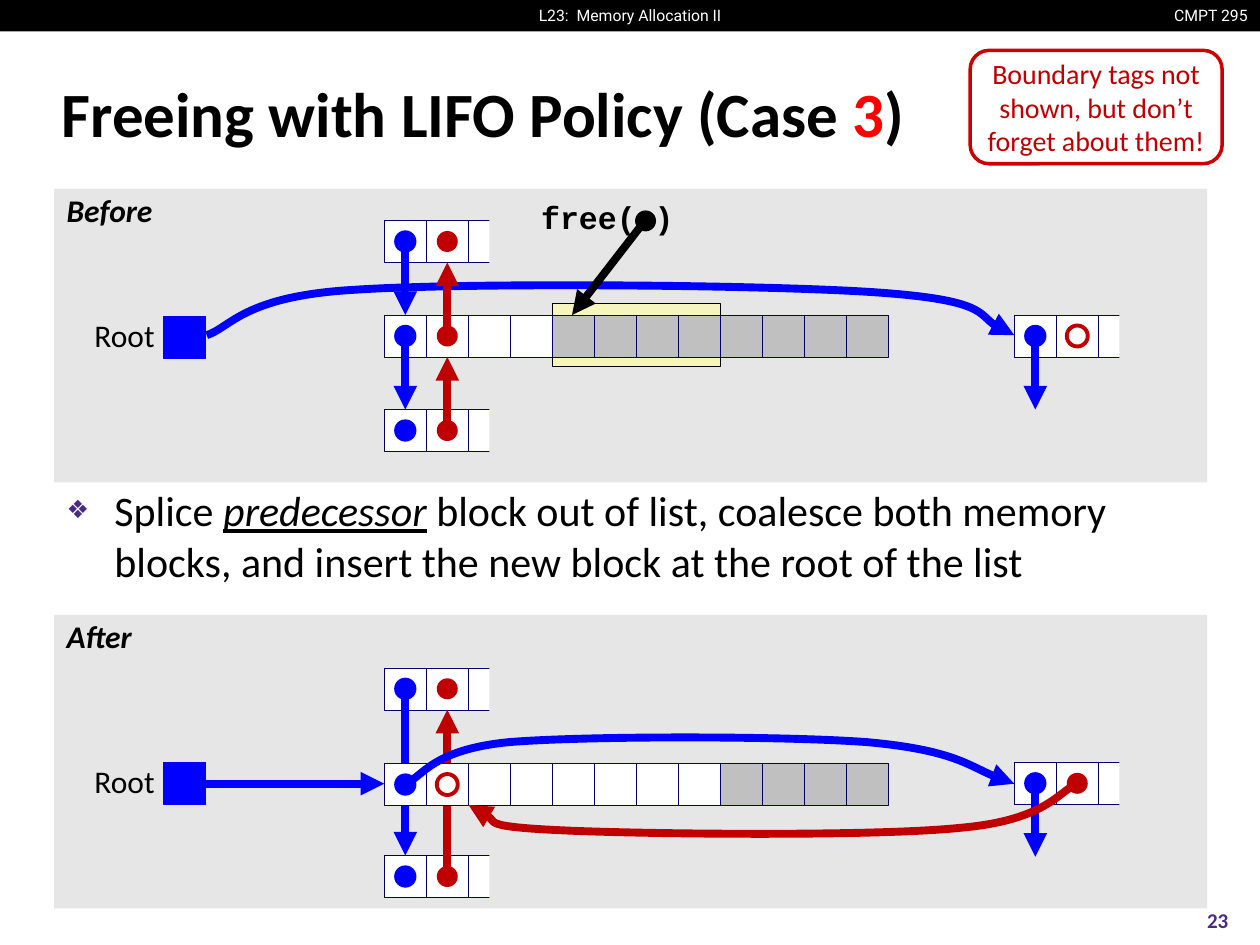
from lxml import etree
from pptx import Presentation
from pptx.dml.color import RGBColor
from pptx.enum.shapes import MSO_CONNECTOR, MSO_SHAPE
from pptx.enum.text import MSO_ANCHOR, PP_ALIGN
from pptx.oxml.ns import qn
from pptx.util import Inches, Pt

RECT, OVAL, ROUNDED = MSO_SHAPE.RECTANGLE, MSO_SHAPE.OVAL, MSO_SHAPE.ROUNDED_RECTANGLE
STRAIGHT = MSO_CONNECTOR.STRAIGHT
TOP, MIDDLE = MSO_ANCHOR.TOP, MSO_ANCHOR.MIDDLE
LEFT, CENTER, RIGHT = PP_ALIGN.LEFT, PP_ALIGN.CENTER, PP_ALIGN.RIGHT
COLORS = {
    "black": "000000", "white": "FFFFFF", "panel": "E6E6E6", "edge": "000066",
    "used": "C0C0C0", "freed": "F6F5BD", "next": "0000FF", "prev": "C00000",
    "border": "CC0000", "case": "FF0000", "accent": "4B2A85",
}
CELL = 1 / 3
DOT = 1 / 6
ROOT_X, LIST_X, FAR_X = 0.87, 2.62, 7.62


def rgb(name):
    return RGBColor.from_string(COLORS[name])


def add_shape(page, kind, left, top, width, height, fill=None, line=None, weight=0.75):
    shape = page.shapes.add_shape(kind, Inches(left), Inches(top), Inches(width), Inches(height))
    shape.shadow.inherit = False
    if fill:
        shape.fill.solid()
        shape.fill.fore_color.rgb = rgb(fill)
    else:
        shape.fill.background()
    if line:
        shape.line.color.rgb = rgb(line)
        shape.line.width = Pt(weight)
    else:
        shape.line.fill.background()
    return shape


def fill_text(box, runs, size, color="black", font="Calibri", align=LEFT, anchor=TOP,
              bold=None, italic=None, wrap=True, margins=(0.1, 0.05), spacing=None):
    frame = box.text_frame
    frame.word_wrap = wrap
    frame.vertical_anchor = anchor
    frame.margin_left = frame.margin_right = Inches(margins[0])
    frame.margin_top = frame.margin_bottom = Inches(margins[1])
    para = frame.paragraphs[0]
    para.alignment = align
    para.line_spacing = spacing
    para.font.size = Pt(size)
    para.font.name = font
    para.font.bold = bold
    para.font.italic = italic
    para.font.color.rgb = rgb(color)
    for text in runs:
        para.add_run().text = text
    return para


def add_text(page, left, top, width, height, runs, size, **style):
    box = page.shapes.add_textbox(Inches(left), Inches(top), Inches(width), Inches(height))
    return fill_text(box, runs, size, **style)


def set_arrow_line(line, color):
    line.color.rgb = rgb(color)
    line.width = Pt(4.5)
    etree.SubElement(line._get_or_add_ln(), qn("a:tailEnd"), type="triangle")


def add_arrow(page, start, end, color):
    arrow = page.shapes.add_connector(STRAIGHT, *(Inches(value) for value in (*start, *end)))
    set_arrow_line(arrow.line, color)
    etree.SubElement(arrow._element.spPr, qn("a:effectLst"))


def add_curve(page, left, top, points, color):
    spots = [(Inches(left + x), Inches(top + y)) for x, y in points]
    builder = page.shapes.build_freeform(*spots[0])
    builder.add_line_segments(spots[1:], close=False)
    curve = builder.convert_to_shape()
    curve.shadow.inherit = False
    curve.fill.background()
    set_arrow_line(curve.line, color)
    segments = list(curve._element.iter(qn("a:lnTo")))
    for index in range(0, len(segments), 3):
        bezier = etree.Element(qn("a:cubicBezTo"))
        segments[index].addprevious(bezier)
        for segment in segments[index:index + 3]:
            bezier.append(segment[0])
            segment.getparent().remove(segment)


def add_dot(page, left, top, color, hollow=False):
    inset = (CELL - DOT) / 2
    line, weight = (color, 2.25) if hollow else (color if color == "next" else None, 0.75)
    add_shape(page, OVAL, left + inset, top + inset, DOT, DOT,
              None if hollow else color, line, weight)


def add_block(page, left, top, fills, hollow=False):
    for index, fill in enumerate(fills):
        add_shape(page, RECT, left + index * CELL, top, CELL, CELL, fill, "edge", 0.25)
    if len(fills) == 3:
        add_shape(page, RECT, left + 2.5 * CELL, top - 0.09, CELL, 0.5, "panel")
    add_dot(page, left, top, "next")
    add_dot(page, left + CELL, top, "prev", hollow)


def add_panel(page, left, top, label, root_y):
    add_shape(page, RECT, left, top, 9.15, 2.33, "panel")
    add_text(page, left, top, 1, 0.4, [label], 18, bold=True, italic=True,
             wrap=False, spacing=0.9)
    add_shape(page, RECT, left + ROOT_X, top + root_y, CELL, CELL, "next", "next")
    add_text(page, left + ROOT_X - 0.6, top + root_y, 0.6, CELL, ["Root"], 18,
             anchor=MIDDLE, wrap=False, margins=(0.05, 0), spacing=0.9)


def add_before(page, left, top):
    list_x, far_x = left + LIST_X, left + FAR_X
    next_x, prev_x = list_x + CELL / 2, list_x + 1.5 * CELL
    rows = [top + 0.25, top + 1, top + 1.75]
    add_panel(page, left, top, "Before", 1.01)
    add_shape(page, RECT, list_x + 4 * CELL, top + 0.91, 4 * CELL, 0.5, "freed", "black")
    add_block(page, list_x, rows[1], ["white"] * 4 + ["used"] * 8)
    add_curve(page, left, top, [
        (1.21, 1.16), (1.4, 1.1), (1.5, 0.85), (2.38, 0.8), (3.27, 0.74), (5.64, 0.76),
        (6.52, 0.82), (7.39, 0.88), (7.39, 1.09), (7.62, 1.16)], "next")
    add_block(page, far_x, top + 1, ["white"] * 3, hollow=True)
    add_arrow(page, (far_x + CELL / 2, top + 1.17), (far_x + CELL / 2, top + 1.75), "next")
    add_text(page, left + 3.81, top + 0.06, 1.16, 0.38, ["free( )"], 18, font="Courier New",
             align=CENTER, bold=True, wrap=False, margins=(0.05, 0.05), spacing=0.9)
    add_shape(page, OVAL, left + 4.61, top + 0.17, DOT, DOT, "black")
    add_arrow(page, (left + 4.69, top + 0.25), (left + 4.11, top + 1), "black")
    for row in (rows[0], rows[2]):
        add_block(page, list_x, row, ["white"] * 3)
    for upper, lower in zip(rows, rows[1:]):
        add_arrow(page, (next_x, upper + CELL / 2), (next_x, lower), "next")
        add_arrow(page, (prev_x, lower + CELL / 2), (prev_x, upper + CELL), "prev")


def add_after(page, left, top):
    list_x, far_x = left + LIST_X, left + FAR_X
    next_x, prev_x = list_x + CELL / 2, list_x + 1.5 * CELL
    upper, middle, lower = top + 0.42, top + 1.18, top + 1.91
    add_panel(page, left, top, "After", 1.17)
    add_block(page, far_x, top + 1.17, ["white"] * 3)
    add_arrow(page, (far_x + CELL / 2, top + 1.33), (far_x + CELL / 2, top + 1.92), "next")
    for row in (upper, lower):
        add_block(page, list_x, row, ["white"] * 3)
    add_arrow(page, (prev_x, lower + CELL / 2), (prev_x, upper + CELL), "prev")
    add_arrow(page, (next_x, upper + CELL / 2), (next_x, lower), "next")
    add_block(page, list_x, middle, ["white"] * 8 + ["used"] * 4, hollow=True)
    add_arrow(page, (left + 1.12, top + 1.34), (list_x, top + 1.34), "next")
    add_curve(page, left, top, [
        (2.79, 1.34), (2.93, 1.28), (3, 1.07), (3.61, 1.01), (4.22, 0.96), (5.78, 0.96),
        (6.45, 1.01), (7.12, 1.07), (7.38, 1.27), (7.62, 1.34)], "next")
    add_curve(page, left, top, [
        (8.12, 1.34), (7.97, 1.4), (7.88, 1.63), (7.19, 1.69), (6.51, 1.76), (4.68, 1.74),
        (4.03, 1.71), (3.38, 1.68), (3.44, 1.55), (3.29, 1.51)], "prev")


def add_header(page, left, top, width, height):
    add_shape(page, RECT, left, top, width, height, "black")
    style = {"color": "white", "font": "Roboto", "wrap": False}
    add_text(page, left + width - 0.81, top, 0.81, height, ["CMPT 295"], 9, align=RIGHT, **style)
    add_text(page, left + width / 2 - 0.83, top, 1.66, height,
             ["L23:\u00a0 Memory Allocation II".replace("\u00a0", " ")], 9, align=CENTER, **style)


def add_title(page, left, top, width, height):
    para = add_text(page, left, top, width, height,
                    ["Freeing with LIFO Policy (Case ", "3", ")"], 36, anchor=MIDDLE, bold=True)
    para.runs[1].font.color.rgb = rgb("case")


def add_note(page, left, top, width, height):
    box = add_shape(page, ROUNDED, left, top, width, height, line="border", weight=2)
    fill_text(box, ["Boundary tags not shown, but don’t forget about them!"], 16, "prev",
              align=CENTER, anchor=MIDDLE, margins=(0, 0.05))


def add_body(page, left, top, width, height):
    para = add_text(page, left, top, width, height, [
        "Splice ", "predecessor",
        " block out of list, coalesce both memory blocks, "
        "and insert the new block at the root of the list"], 24)
    para.runs[1].font.italic = True
    para.runs[1].font.underline = True
    para.space_before = Pt(4.8)
    props = para._p.get_or_add_pPr()
    props.set("marL", str(Inches(0.38)))
    props.set("indent", str(-Inches(0.38)))
    bullet = [etree.Element(qn(tag)) for tag in ("a:buClr", "a:buSzPct", "a:buFont", "a:buChar")]
    etree.SubElement(bullet[0], qn("a:srgbClr"), val=COLORS["accent"])
    bullet[1].set("val", "60000")
    bullet[2].set("typeface", "Calibri")
    bullet[3].set("char", "❖")
    for part in bullet:
        props.find(qn("a:defRPr")).addprevious(part)


def main():
    deck = Presentation()
    deck.slide_width, deck.slide_height = Inches(10), Inches(7.5)
    page = deck.slides.add_slide(deck.slide_layouts[6])
    add_header(page, 0, 0, 10, 0.25)
    add_title(page, 0.39, 0.48, 9.19, 0.83)
    add_body(page, 0.43, 3.8, 9.15, 1.2)
    add_text(page, 9.33, 7.1, 0.67, 0.4, ["23"], 12, color="accent",
             align=CENTER, anchor=MIDDLE, bold=True)
    add_note(page, 7.7, 0.4, 2, 0.9)
    add_before(page, 0.43, 1.5)
    add_after(page, 0.43, 4.88)
    deck.save("out.pptx")


if __name__ == "__main__":
    main()
